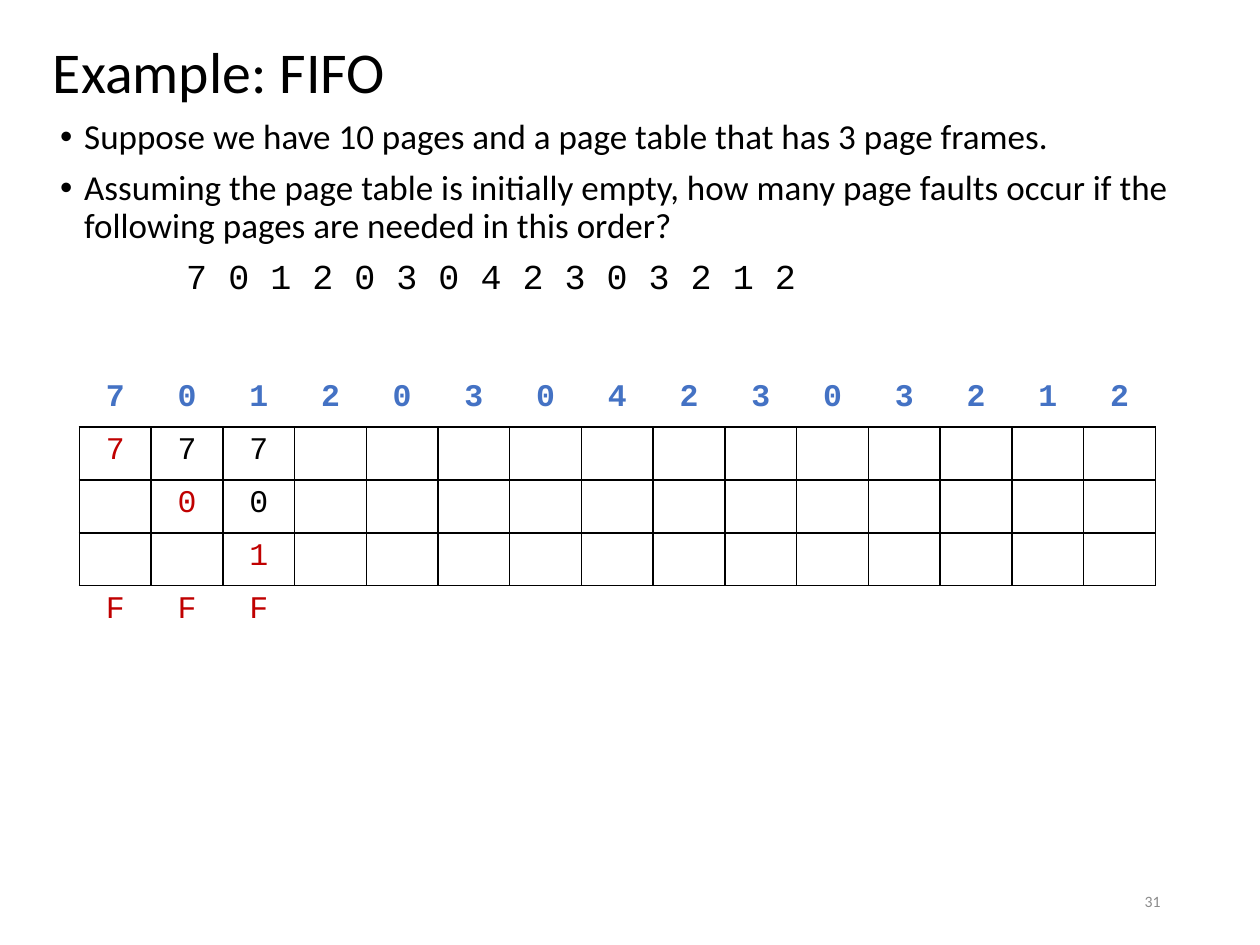
from dataclasses import dataclass

from lxml.etree import SubElement
from pptx import Presentation
from pptx.dml.color import RGBColor
from pptx.enum.text import MSO_ANCHOR as Anchor, MSO_AUTO_SIZE as AutoSize, PP_ALIGN as Align
from pptx.oxml.ns import qn
from pptx.util import Inches, Pt


@dataclass(frozen=True)
class Theme:
    font: str = "Calibri"
    mono: str = "Courier New"
    ink: str = "000000"
    header: str = "4472C4"
    fault: str = "C00000"
    muted: str = "8C8C8C"
    title_size: float = 33
    body_size: float = 20
    cell_size: float = 18
    number_size: float = 9
    border: float = 1
    line_spacing: float = 0.9
    space_before: float = 7.5


REQUESTS = "7 0 1 2 0 3 0 4 2 3 0 3 2 1 2"
BULLETS = [
    "Suppose we have 10 pages and a page table that has 3 page frames.",
    "Assuming the page table is initially empty, how many page faults occur "
    "if the following pages are needed in this order?",
]
FRAME_COUNT = 3


class SlideBuilder:
    def __init__(self, slide, theme):
        self.slide = slide
        self.theme = theme

    def format_text(self, para, size, color, font=None, bold=False, align=Align.LEFT):
        para.alignment = align
        for span in para.runs:
            span.font.name = font or self.theme.font
            span.font.size = Pt(size)
            span.font.bold = bold
            span.font.color.rgb = RGBColor.from_string(color)

    def title(self, text, left, top, width, height):
        box = self.slide.shapes.title
        box.left, box.top, box.width, box.height = map(Inches, (left, top, width, height))
        frame = box.text_frame
        frame.text = text
        frame.auto_size = AutoSize.NONE
        frame.vertical_anchor = Anchor.MIDDLE
        para = frame.paragraphs[0]
        para.line_spacing = self.theme.line_spacing
        self.format_text(para, self.theme.title_size, self.theme.ink)

    def text_box(self, left, top, width, height):
        box = self.slide.shapes.add_textbox(*map(Inches, (left, top, width, height)))
        box.text_frame.word_wrap = True
        return box.text_frame

    def indent(self, para, margin, first_line=0, bullet=None):
        properties = para._p.get_or_add_pPr()
        properties.set("marL", str(Inches(margin)))
        properties.set("indent", str(Inches(first_line)))
        if bullet:
            SubElement(properties, qn("a:buFont")).set("typeface", "Arial")
            SubElement(properties, qn("a:buChar")).set("char", bullet)

    def body(self, bullets, sequence, left, top, width, height):
        theme = self.theme
        frame = self.text_box(left, top, width, height)
        frame.text = "\n".join([*bullets, sequence])
        for para in frame.paragraphs:
            para.line_spacing = theme.line_spacing
            para.space_before = Pt(theme.space_before)
            self.format_text(para, theme.body_size, theme.ink)
        for para in frame.paragraphs[:-1]:
            self.indent(para, 0.19, -0.19, "•")
        self.format_text(para := frame.paragraphs[-1], theme.body_size, theme.ink, theme.mono)
        self.indent(para, 1)

    def page_number(self, text, left, top, width, height):
        frame = self.text_box(left, top, width, height)
        frame.text = text
        frame.vertical_anchor = Anchor.MIDDLE
        self.format_text(frame.paragraphs[0], self.theme.number_size,
                         self.theme.muted, align=Align.RIGHT)

    def cell_borders(self, cell, visible_sides):
        properties = cell._tc.get_or_add_tcPr()
        for side in "LRTB":
            line = SubElement(properties, qn(f"a:ln{side}"), w=str(Pt(self.theme.border)))
            if side in visible_sides:
                fill = SubElement(line, qn("a:solidFill"))
                SubElement(fill, qn("a:srgbClr")).set("val", self.theme.ink)
            else:
                SubElement(line, qn("a:noFill"))

    def frame_table(self, requests, left, top, width, row_height):
        """Show the requests, the page frames under them and the fault marks."""
        theme = self.theme
        last_row = FRAME_COUNT + 1
        row_count, column_count = last_row + 1, len(requests)
        table = self.slide.shapes.add_table(
            row_count, column_count, Inches(left), Inches(top),
            Inches(width), Inches(row_height * row_count)).table
        table.first_row = table.horz_banding = False
        for column in table.columns:
            column.width = Inches(width / column_count)
        for row_index, row in enumerate(table.rows):
            row.height = Inches(row_height)
            sides = {0: "B", last_row: "T"}.get(row_index, "LRTB")
            for column_index, cell in enumerate(row.cells):
                text, color = "", theme.ink
                if row_index == 0:
                    text, color = requests[column_index], theme.header
                elif column_index < FRAME_COUNT:
                    frame_index = row_index - 1
                    if row_index == last_row:
                        text, color = "F", theme.fault
                    elif frame_index <= column_index:
                        text = requests[frame_index]
                        color = theme.fault if frame_index == column_index else theme.ink
                cell.text_frame.text = text
                self.format_text(cell.text_frame.paragraphs[0], theme.cell_size, color,
                                 theme.mono, row_index == 0, Align.CENTER)
                self.cell_borders(cell, sides)
                cell.fill.background()


def main():
    deck = Presentation()
    deck.slide_width, deck.slide_height = Inches(10), Inches(7.5)
    title_only = deck.slide_layouts[5]
    page = SlideBuilder(deck.slides.add_slide(title_only), Theme())
    page.body(BULLETS, REQUESTS, 0.38, 0.9, 9.3, 6.5)
    page.title("Example: FIFO", 0.32, 0.1, 9.35, 0.99)
    page.page_number("31", 7.06, 6.95, 2.25, 0.4)
    page.frame_table(REQUESTS.split(), 0.63, 2.97, 8.54, 0.42)
    deck.save("out.pptx")


if __name__ == "__main__":
    main()
